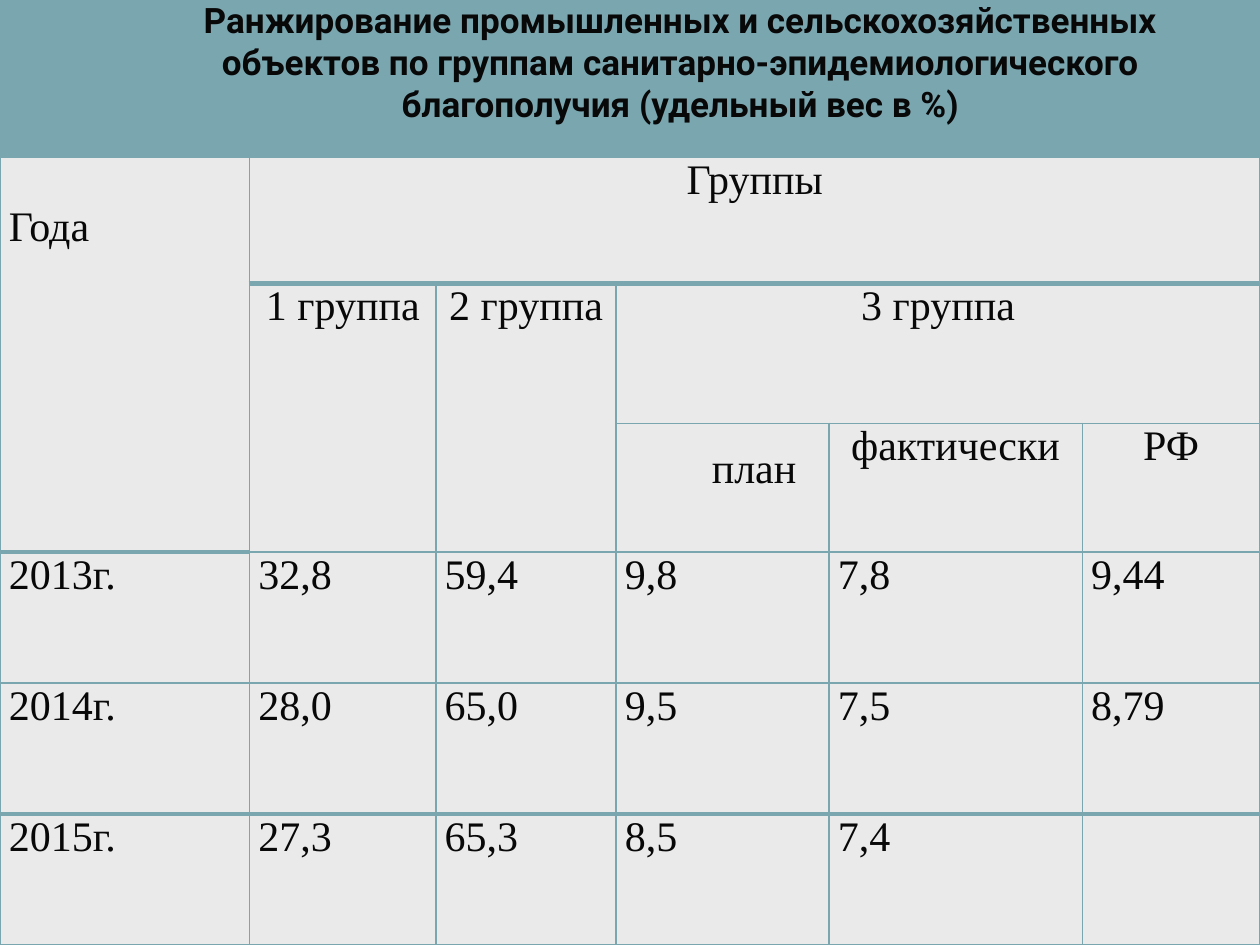
from lxml import etree
from pptx import Presentation
from pptx.dml.color import RGBColor
from pptx.enum.text import MSO_ANCHOR, PP_ALIGN
from pptx.oxml.ns import qn
from pptx.util import Inches, Pt

MID = MSO_ANCHOR.MIDDLE
CENTER, JUST = PP_ALIGN.CENTER, PP_ALIGN.JUSTIFY

WIDE, HIGH = Inches(10), Inches(7.5)
HEX = {"back": "7AA6B0", "cell": "EAEAEA", "text": "080808"}
HEAD = {"name": "Roboto", "size": Pt(20), "bold": True}
BODY = {"name": "Times New Roman", "size": Pt(24), "bold": False}
PADS = {"margin_left": Inches(0.07), "margin_right": Inches(0.07),
        "margin_top": 0, "margin_bottom": 0}

TITLE = ("Ранжирование промышленных и сельскохозяйственных объектов "
         "по группам санитарно-эпидемиологического благополучия "
         "(удельный вес в %)")
COLS = [1.98, 1.48, 1.43, 1.69, 2.01, 1.41]
ROWS = [1, 1.11, 1.02, 1.04, 1.04, 1.04]
# Row, column, rows spanned, columns spanned
SPANS = [(0, 0, 3, 1), (0, 1, 1, 5), (1, 1, 2, 1), (1, 2, 2, 1), (1, 3, 1, 3)]
GRID = [
    ["Года", "Группы", "", "", "", ""],
    ["", "1 группа", "2 группа", "3 группа", "", ""],
    ["", "", "", "план", "фактически", "РФ"],
    ["2013г.", "32,8", "59,4", "9,8", "7,8", "9,44"],
    ["2014г.", "28,0", "65,0", "9,5", "7,5", "8,79"],
    ["2015г.", "27,3", "65,3", "8,5", "7,4", ""],
]
TOP = 3  # number of heading rows
# Cells with a thick line below
THICK = {(r, c) for r in (0, 4) for c in range(len(COLS))} | {(2, 0)}


def color(key):
    return RGBColor.from_string(HEX[key])


def assign(item, vals):
    for key, val in vals.items():
        setattr(item, key, val)


def write(para, text, font, align):
    para.text = text
    para.alignment = align
    assign(para.font, font)
    para.font.color.rgb = color("text")


def edge(cell, tag, width):
    line = etree.SubElement(cell._tc.get_or_add_tcPr(), qn("a:" + tag),
                            w=str(Pt(width)))
    fill = etree.SubElement(line, qn("a:solidFill"))
    etree.SubElement(fill, qn("a:srgbClr"), val=HEX["back"])


def add_title(slide, box):
    frame = slide.shapes.add_textbox(*box).text_frame
    assign(frame, {"word_wrap": True, "vertical_anchor": MID,
                   "margin_top": 0, "margin_bottom": Inches(0.34)})
    write(frame.paragraphs[0], TITLE, HEAD, CENTER)


def style(cell, row, col):
    assign(cell, PADS)
    over = 3 if (row - 1, col) in THICK else 1
    under = 3 if (row, col) in THICK else 1
    for tag, width in (("lnL", 1), ("lnR", 1), ("lnT", over), ("lnB", under)):
        edge(cell, tag, width)
    cell.fill.solid()
    cell.fill.fore_color.rgb = color("cell")


def add_grid(slide, box):
    left, top, wide, high = box
    table = slide.shapes.add_table(len(ROWS), len(COLS), *box).table
    assign(table, {"first_row": False, "horz_banding": False})
    for col, part in zip(table.columns, COLS):
        col.width = int(wide * part / sum(COLS))
    for row, part in zip(table.rows, ROWS):
        row.height = int(high * part / sum(ROWS))
    for r, line in enumerate(GRID):
        for c, text in enumerate(line):
            cell = table.cell(r, c)
            style(cell, r, c)
            align = CENTER if r < TOP and c else JUST
            write(cell.text_frame.paragraphs[0], text, BODY, align)
    for r, c, down, across in SPANS:
        table.cell(r, c).merge(table.cell(r + down - 1, c + across - 1))
    table.cell(0, 0).margin_top = Inches(0.37)
    plan = table.cell(2, 3).text_frame.paragraphs[0]
    plan.line_spacing = 1.5
    plan._p.get_or_add_pPr().set("indent", str(Inches(0.5)))


def main():
    deck = Presentation()
    assign(deck, {"slide_width": WIDE, "slide_height": HIGH})
    slide = deck.slides.add_slide(deck.slide_layouts[6])
    back = slide.background.fill
    back.solid()
    back.fore_color.rgb = color("back")
    split = HIGH // 6
    add_title(slide, (int(WIDE * 0.106), int(HIGH * 0.01),
                      int(WIDE * 0.868), int(HIGH * 0.156)))
    add_grid(slide, (0, split, WIDE, HIGH - split))
    deck.save("out.pptx")


if __name__ == "__main__":
    main()
